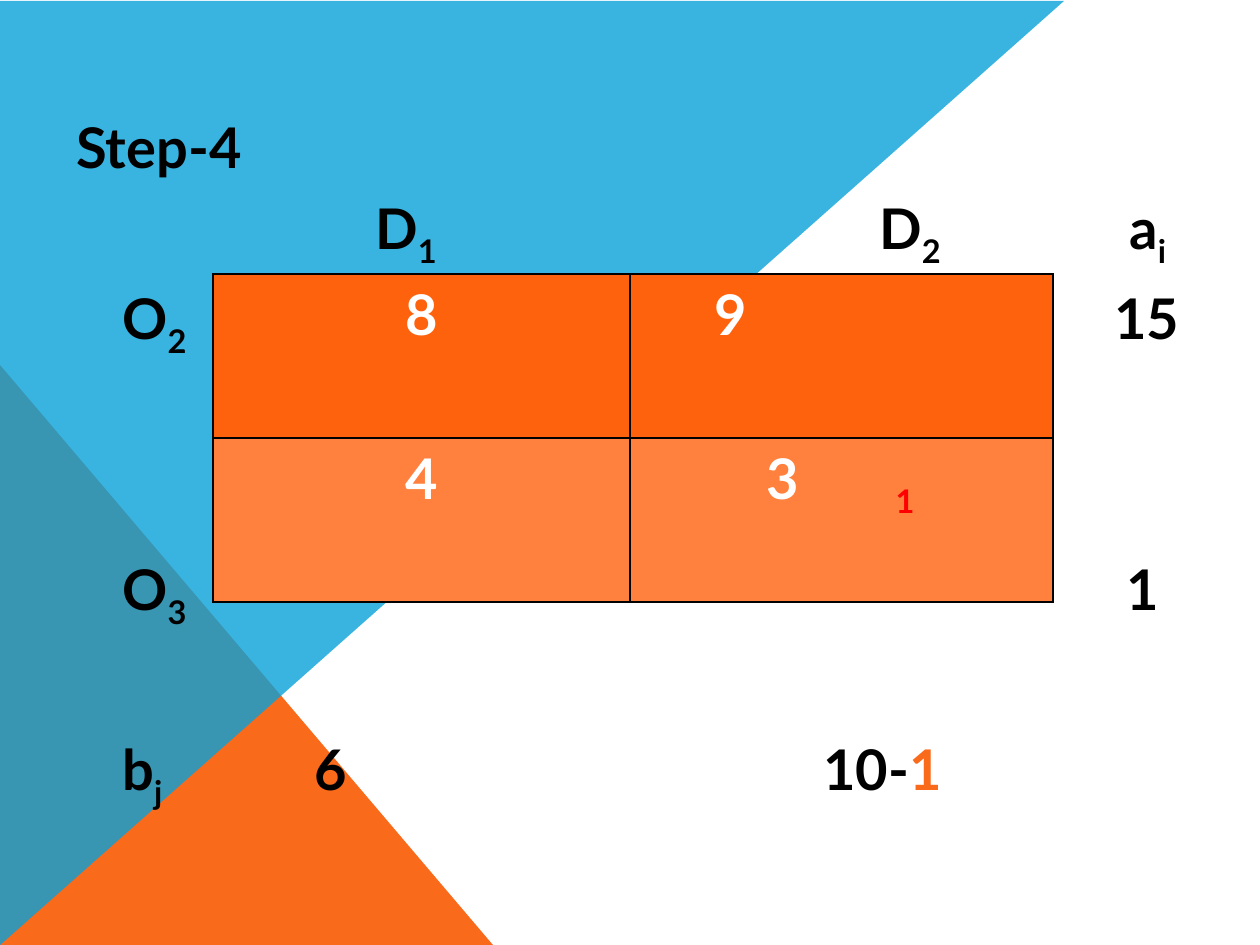
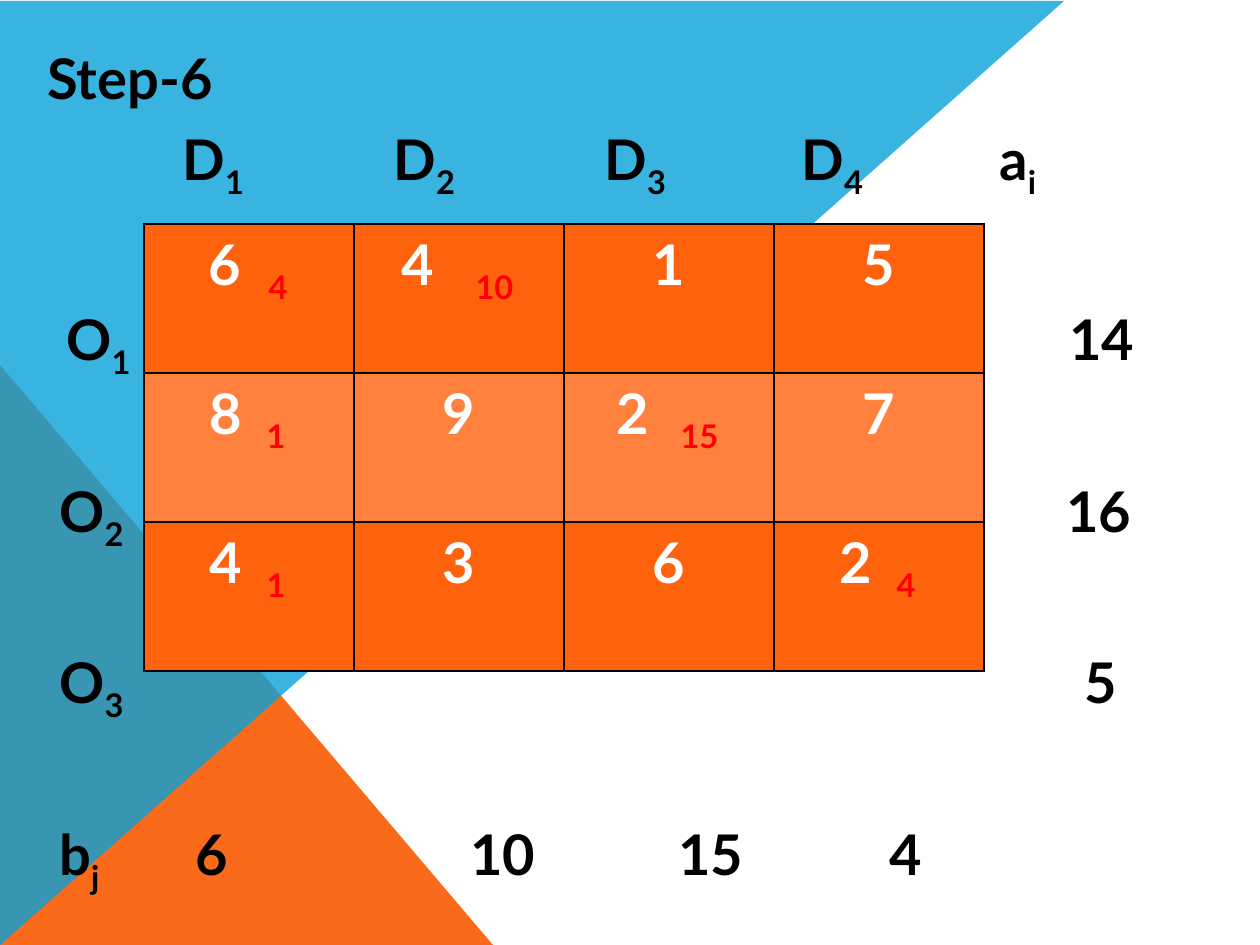
"""Build the two transportation-table slides, Step-4 and Step-6."""
from lxml.etree import SubElement
from pptx import Presentation
from pptx.dml.color import RGBColor
from pptx.enum.shapes import MSO_SHAPE
from pptx.enum.text import PP_ALIGN
from pptx.oxml.ns import qn
from pptx.util import Emu, Pt

SCALE = 914400 / 126
INSET = 13
COLOURS = {
    "blue": "08A1D9",
    "orange": "F96A1B",
    "row": "FF620D",
    "band": "FF813D",
    "black": "000000",
    "white": "FFFFFF",
    "red": "FF0000",
}
TRIANGLES = [
    ("orange", (0, 365, 493, 580), 0, 100),
    ("blue", (59, -59, 945, 1065), 90, 80),
]
STEPS = [
    {
        "title": "Step-4",
        "body": (64, 106, 1131, 713),
        "lines": [
            (14, [(376, "D", "1"), (880, "D", "2"), (1130, "a", "i")]),
            (14, [(123, "O", "2"), (1115, "15", "")]),
            (194, [(123, "O", "3"), (1127, "1", "")]),
            (104, [(123, "b", "j"), (315, "6", ""), (824, "10-", "")]),
        ],
        "tail": "1",
        "corner": (213, 274),
        "columns": [417, 423],
        "row_height": 164,
        "cells": [
            ["8", [(715, "9", "")]],
            ["4", [(767, "3", ""), (896, "", "1")]],
        ],
    },
    {
        "title": "Step-6",
        "body": (35, 37, 1160, 814),
        "lines": [
            (14, [(183, "D", "1"), (394, "D", "2"), (605, "D", "3"),
                  (802, "D", "4"), (1000, "a", "i")]),
            (104, [(67, "O", "1"), (1070, "14", "")]),
            (95, [(60, "O", "2"), (1067, "16", "")]),
            (95, [(60, "O", "3"), (1085, "5", "")]),
            (95, [(60, "b", "j"), (196, "6", ""), (471, "10", ""),
                  (679, "15", ""), (890, "4", "")]),
        ],
        "tail": "",
        "corner": (144, 224),
        "columns": [210] * 4,
        "row_height": 149,
        "cells": [
            [[(209, "6", ""), (269, "", "4")], [(402, "4", ""), (476, "", "10")], "1", "5"],
            [[(210, "8", ""), (267, "", "1")], "9", [(617, "2", ""), (681, "", "15")], "7"],
            [[(210, "4", ""), (267, "", "1")], "3", "6", [(840, "2", ""), (897, "", "4")]],
        ],
    },
]


def add_span(para, text, colour, subscript=False):
    span = para.add_run()
    span.text = text
    span.font.name = "Lato"
    span.font.size = Pt(32)
    span.font.bold = True
    span.font.color.rgb = RGBColor.from_string(COLOURS[colour])
    if subscript:
        span.font._element.set("baseline", "-25000")


def add_tabbed(para, items, origin, colour, small_colour):
    tabs = SubElement(para._p.get_or_add_pPr(), qn("a:tabLst"))
    for x, text, small in items:
        SubElement(tabs, qn("a:tab"), pos=str(round((x - origin) * SCALE)), algn="l")
        add_span(para, "\t" + text, colour)
        if small:
            add_span(para, small, small_colour, subscript=True)


deck = Presentation()
deck.slide_width = Emu(round(1260 * SCALE))
deck.slide_height = Emu(round(945 * SCALE))

for step in STEPS:
    page = deck.slides.add_slide(deck.slide_layouts[6])

    for colour, place, rotation, opacity in TRIANGLES:
        triangle = page.shapes.add_shape(
            MSO_SHAPE.RIGHT_TRIANGLE, *[Emu(round(n * SCALE)) for n in place])
        triangle.rotation = rotation
        triangle.shadow.inherit = False
        triangle.line.fill.background()
        triangle.fill.solid()
        triangle.fill.fore_color.rgb = RGBColor.from_string(COLOURS[colour])
        if opacity < 100:
            paint = triangle._element.spPr.find(qn("a:solidFill"))[0]
            SubElement(paint, qn("a:alpha"), val=str(opacity * 1000))

    box = page.shapes.add_textbox(*[Emu(round(n * SCALE)) for n in step["body"]])
    frame = box.text_frame
    frame.word_wrap = True
    add_span(frame.paragraphs[0], step["title"], "black")
    for gap, items in step["lines"]:
        para = frame.add_paragraph()
        add_tabbed(para, items, step["body"][0] + INSET, "black", "black")
        para.space_before = Emu(round(gap * SCALE))
    if step["tail"]:
        add_span(para, step["tail"], "orange")

    left, top = step["corner"]
    columns, cells = step["columns"], step["cells"]
    size = (left, top, sum(columns), step["row_height"] * len(cells))
    table = page.shapes.add_table(
        len(cells), len(columns), *[Emu(round(n * SCALE)) for n in size]).table
    table.first_row = False
    table.horz_banding = False
    for index, width in enumerate(columns):
        table.columns[index].width = Emu(round(width * SCALE))
    for row, contents in enumerate(cells):
        table.rows[row].height = Emu(round(step["row_height"] * SCALE))
        for column, content in enumerate(contents):
            cell = table.cell(row, column)
            para = cell.text_frame.paragraphs[0]
            if isinstance(content, str):
                para.alignment = PP_ALIGN.CENTER
                add_span(para, content, "white")
            else:
                origin = left + sum(columns[:column]) + INSET
                add_tabbed(para, content, origin, "white", "red")
            properties = cell._tc.get_or_add_tcPr()
            for side in ("lnL", "lnR", "lnT", "lnB"):
                border = SubElement(properties, qn("a:" + side), w="12700")
                paint = SubElement(border, qn("a:solidFill"))
                SubElement(paint, qn("a:srgbClr"), val=COLOURS["black"])
            cell.fill.solid()
            cell.fill.fore_color.rgb = RGBColor.from_string(
                COLOURS["band" if row % 2 else "row"])

deck.save("out.pptx")
